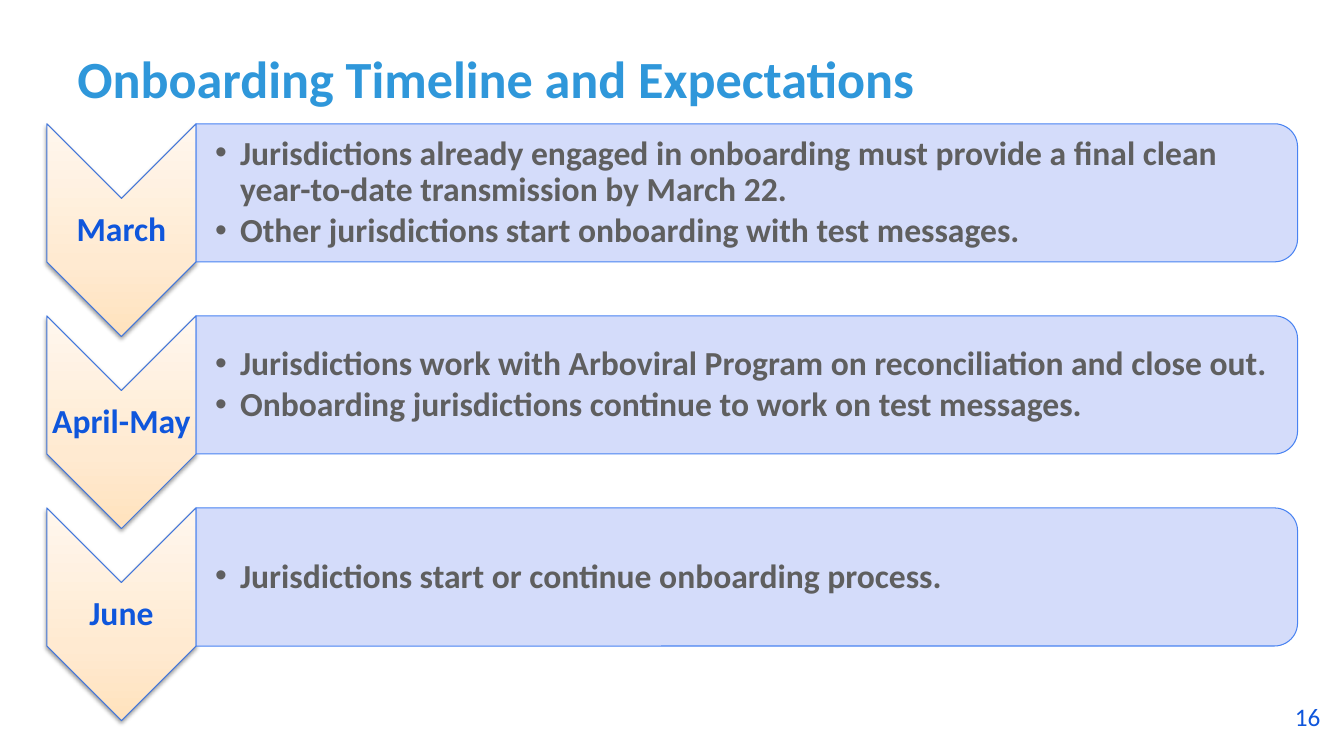
from pptx import Presentation, util as u
from pptx.dml.color import RGBColor
from pptx.enum import shapes, text
from pptx.oxml import parse_xml
from pptx.oxml.ns import nsdecls, qn

Cm, Pt = u.Cm, u.Pt
FONT = "Calibri"
COLOURS = {
    "title": "2F97DA",
    "label": "0F56DC",
    "body": "5F5F5F",
    "panel": "D0D9FA",
    "panel line": "4983F2",
    "chevron line": "4277DC",
    "shadow": "000000",
}
CHEVRON_STOPS = [(0, "FFE2BD"), (35, "FFEAD1"), (100, "FFF7EE")]
STAGES = [
    ("March", [
        "Jurisdictions already engaged in onboarding must provide a final clean "
        "year-to-date transmission by March 22.",
        "Other jurisdictions start onboarding with test messages.",
    ]),
    ("April-May", [
        "Jurisdictions work with Arboviral Program on reconciliation and close out.",
        "Onboarding jurisdictions continue to work on test messages.",
    ]),
    ("June", ["Jurisdictions start or continue onboarding process."]),
]
FIRST_TOP, STAGE_PITCH = 3.12, 4.84
CHEVRON_LEFT, CHEVRON_WIDTH, CHEVRON_HEIGHT = 1.18, 3.76, 5.36
PANEL_LEFT, PANEL_WIDTH, PANEL_HEIGHT = 4.94, 27.76, 3.48


def colour(name):
    return RGBColor.from_string(COLOURS[name])


def place(shape, left, top, width, height):
    shape.left, shape.top = Cm(left), Cm(top)
    shape.width, shape.height = Cm(width), Cm(height)


def add_run(paragraph, words, size, colour_name, bold=True):
    run = paragraph.add_run()
    run.text = words
    run.font.name, run.font.size, run.font.bold = FONT, Pt(size), bold
    run.font.color.rgb = colour(colour_name)


def set_frame(shape, left_inset=0.05, inset=0.05):
    frame = shape.text_frame
    frame.word_wrap = True
    frame.auto_size = text.MSO_AUTO_SIZE.NONE
    frame.vertical_anchor = text.MSO_ANCHOR.MIDDLE
    frame.margin_left = Cm(left_inset)
    frame.margin_top = frame.margin_right = frame.margin_bottom = Cm(inset)
    return frame


def add_turned_shape(slide, kind, left, top, width, height, line_name):
    """Add a shape turned by 90 degrees that covers the given area on the slide."""
    shift = (width - height) / 2
    shape = slide.shapes.add_shape(
        kind, Cm(left + shift), Cm(top - shift), Cm(height), Cm(width))
    shape.rotation = 90
    shape.shadow.inherit = False
    shape.line.color.rgb = colour(line_name)
    shape.line.width = Pt(0.75)
    return shape


def add_chevron(slide, top):
    shape = add_turned_shape(slide, shapes.MSO_SHAPE.CHEVRON, CHEVRON_LEFT, top,
                             CHEVRON_WIDTH, CHEVRON_HEIGHT, "chevron line")
    properties = shape.element.spPr
    stops = "".join(f'<a:gs pos="{position * 1000}"><a:srgbClr val="{value}"/></a:gs>'
                    for position, value in CHEVRON_STOPS)
    properties.find(qn("a:prstGeom")).addnext(parse_xml(
        f'<a:gradFill {nsdecls("a")} rotWithShape="0"><a:gsLst>{stops}</a:gsLst>'
        '<a:lin ang="16200000" scaled="0"/></a:gradFill>'))
    properties.find(qn("a:effectLst")).append(parse_xml(
        f'<a:outerShdw {nsdecls("a")} blurRad="{Pt(3.1)}" dist="{Pt(1.6)}" '
        f'dir="5400000" rotWithShape="0"><a:srgbClr val="{COLOURS["shadow"]}">'
        '<a:alpha val="38000"/></a:srgbClr></a:outerShdw>'))


def add_panel(slide, top):
    shape = add_turned_shape(slide, shapes.MSO_SHAPE.ROUND_2_SAME_RECTANGLE, PANEL_LEFT,
                             top, PANEL_WIDTH, PANEL_HEIGHT, "panel line")
    shape.fill.solid()
    shape.fill.fore_color.rgb = colour("panel")
    fill_colour = shape.element.spPr.find(qn("a:solidFill")).find(qn("a:srgbClr"))
    fill_colour.append(parse_xml(f'<a:alpha {nsdecls("a")} val="90000"/>'))


def add_text(slide, words, area, size, alignment, bold, inset):
    box = slide.shapes.add_textbox(*map(Cm, area))
    paragraph = set_frame(box, inset, inset).paragraphs[0]
    paragraph.alignment = alignment
    paragraph.line_spacing = 0.9 if bold else 1.0
    add_run(paragraph, words, size, "label", bold)


def fill_list(slide, placeholder, items, top):
    place(placeholder, PANEL_LEFT, top + 0.17, PANEL_WIDTH - 0.16, 3.15)
    slide.shapes.element.append(placeholder.element)  # in front of its panel
    frame = set_frame(placeholder, left_inset=0.48)
    for index, item in enumerate(items):
        paragraph = frame.add_paragraph() if index else frame.paragraphs[0]
        properties = paragraph._p.get_or_add_pPr()
        properties.set("marL", str(Cm(0.63)))
        properties.set("indent", str(-Cm(0.63)))
        properties.append(parse_xml(f'<a:buFont {nsdecls("a")} typeface="Arial"/>'))
        properties.append(parse_xml(f'<a:buChar {nsdecls("a")} char="•"/>'))
        paragraph.alignment = text.PP_ALIGN.LEFT
        paragraph.line_spacing = 0.9
        paragraph.space_before, paragraph.space_after = Pt(0), Pt(3.6)
        add_run(paragraph, item, 24, "body")


def fill_title(title, words):
    place(title, 1.7, 1.17, 30.48, 1.73)
    paragraph = set_frame(title, 0.25, 0.13).paragraphs[0]
    paragraph.alignment = text.PP_ALIGN.LEFT
    paragraph.line_spacing = Pt(40)
    add_run(paragraph, words, 37.3, "title")


def main():
    presentation = Presentation()
    presentation.slide_width, presentation.slide_height = Cm(33.87), Cm(19.05)
    slide = presentation.slides.add_slide(
        presentation.slide_layouts.get_by_name("Comparison"))
    title, *bodies = slide.placeholders
    fill_title(title, "Onboarding Timeline and Expectations")
    for index, (month, items) in enumerate(STAGES):
        top = FIRST_TOP + index * STAGE_PITCH
        add_chevron(slide, top)
        add_text(slide, month, (CHEVRON_LEFT, top + 1.88, CHEVRON_WIDTH, 1.6),
                 24, text.PP_ALIGN.CENTER, True, 0.05)
        add_panel(slide, top)
        fill_list(slide, bodies[index], items, top)
    for spare in bodies[len(STAGES):]:
        slide.shapes.element.remove(spare.element)
    add_text(slide, "16", (30.28, 17.55, 3.2, 1.02), 18, text.PP_ALIGN.RIGHT, False, 0.2)
    presentation.save("out.pptx")


if __name__ == "__main__":
    main()
